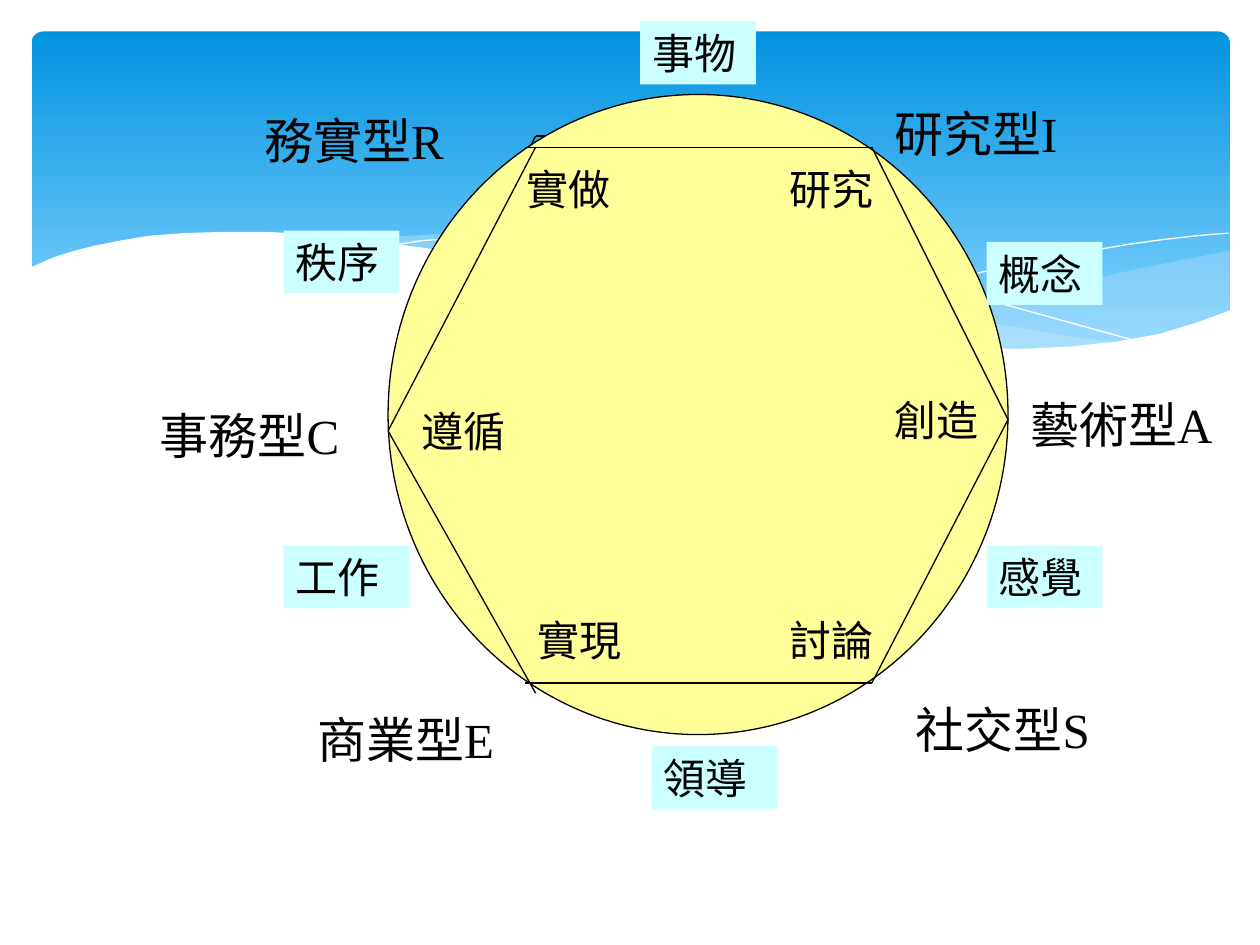
from lxml import etree
from pptx import Presentation
from pptx.dml.color import RGBColor
from pptx.enum.shapes import MSO_CONNECTOR, MSO_SHAPE
from pptx.enum.text import MSO_ANCHOR, MSO_AUTO_SIZE, PP_ALIGN
from pptx.oxml.ns import qn
from pptx.util import Inches, Pt

RECT = MSO_SHAPE.RECTANGLE
ROUND = MSO_SHAPE.ROUNDED_RECTANGLE
OVAL = MSO_SHAPE.OVAL
STRAIGHT = MSO_CONNECTOR.STRAIGHT
LEFT = PP_ALIGN.LEFT
TOP = MSO_ANCHOR.TOP
GROW = MSO_AUTO_SIZE.SHAPE_TO_FIT_TEXT

INK, WHITE, PALE = "000000", "FFFFFF", "C6E7FC"
CREAM, AQUA = "FFFF99", "CCFFFF"

FAR = [(9.75, 1.99), (9.35, 2.07), (8.91, 2.16), (8.32, 2.3), (7.79, 2.42),
       (7.29, 2.53), (6.61, 2.65), (7.05, 2.71), (7.45, 2.75), (7.81, 2.77),
       (8.14, 2.78), (8.54, 2.76), (8.89, 2.72), (9.21, 2.65), (9.49, 2.57),
       (9.76, 2.47), (9.76, 1.99)]
MID = [(8.93, 2.73), (8.37, 2.65), (7.75, 2.54), (7.06, 2.4), (6.29, 2.22),
       (5.84, 2.11), (5.41, 2.03), (5.01, 1.96), (4.65, 1.91), (4.2, 1.87),
       (3.8, 1.86), (3.44, 1.86), (3.13, 1.88), (2.86, 1.91), (3.23, 1.96),
       (3.62, 2.03), (4.04, 2.11), (4.49, 2.22), (5.3, 2.4), (6.01, 2.55),
       (6.65, 2.66), (7.22, 2.74), (7.73, 2.77), (8.18, 2.78), (8.57, 2.77),
       (8.93, 2.73)]
FALL = [(3.09, 1.95), (3.35, 1.91), (3.74, 1.88), (4.16, 1.87), (4.69, 1.89),
        (5.1, 1.92), (5.56, 1.97), (6.08, 2.04), (6.65, 2.13), (7.27, 2.26),
        (7.95, 2.41), (8.31, 2.51), (9.07, 2.72)]
RISE = [(6.13, 2.57), (6.52, 2.46), (6.95, 2.35), (7.48, 2.23), (8.06, 2.1),
        (8.66, 1.99), (8.95, 1.94), (9.24, 1.9), (9.51, 1.87), (9.75, 1.85)]
NEAR = [(9.77, 2.46), (9.5, 2.56), (9.2, 2.65), (8.87, 2.71), (8.5, 2.75),
        (8.09, 2.77), (7.61, 2.75), (7.08, 2.7), (6.47, 2.62), (5.79, 2.5),
        (5.03, 2.33), (4.47, 2.2), (3.91, 2.07), (3.39, 1.97), (2.92, 1.91),
        (2.5, 1.86), (2.11, 1.84), (1.77, 1.84), (1.46, 1.85), (1.19, 1.87),
        (0.95, 1.91), (0.75, 1.95), (0.59, 1.99), (0.46, 2.03), (0.36, 2.07),
        (0.23, 2.13), (0.23, 3.29), (9.77, 3.29)]

BACK = [(4.25, 1.08, 6.67, 1.08), (4.33, 5.5, 6.75, 5.5),
        (4.33, 5.5, 3.08, 3.33), (8, 3.33, 6.67, 1.08),
        (4.25, 1.08, 3.08, 3.42), (8, 3.33, 6.75, 5.5)]
FRONT = [(4.17, 1.17, 6.92, 1.17), (4.17, 5.42, 6.92, 5.42),
         (4.25, 1.17, 3.08, 3.42), (3.08, 3.42, 4.25, 5.5),
         (6.92, 1.17, 8, 3.33), (8, 3.33, 6.92, 5.42)]
TYPES = [("研究型I", 7, 0.77), ("藝術型A", 8.08, 3.08), ("社交型S", 7.17, 5.5),
         ("商業型E", 2.42, 5.58), ("事務型C", 1.17, 3.17), ("務實型R", 2, 0.83)]
ACTS = [("實做", 4.08, 1.25), ("討論", 6.17, 4.83), ("實現", 4.17, 4.83),
        ("遵循", 3.25, 3.17), ("研究", 6.17, 1.25), ("創造", 7, 3.08)]
TAGS = [("事物", 5.08, 0.17, 0.92), ("秩序", 2.25, 1.83, 0.92),
        ("工作", 2.25, 4.33, 1), ("領導", 5.17, 5.92, 1),
        ("感覺", 7.83, 4.33, 0.92), ("概念", 7.83, 1.92, 0.92)]


def color(code):
    return RGBColor.from_string(code)


class Board:
    """Holds the style and the slide being drawn."""

    font = "Times New Roman"
    width = Pt(0.75)

    def __init__(self, slide):
        self.slide = slide
        self.shapes = slide.shapes

    def paint(self, shape, fill=None, line=None, width=None):
        shape.shadow.inherit = False
        if fill:
            shape.fill.solid()
            shape.fill.fore_color.rgb = color(fill)
        else:
            shape.fill.background()
        if line:
            shape.line.color.rgb = color(line)
            shape.line.width = self.width if width is None else width
        else:
            shape.line.fill.background()

    def shape(self, kind, x, y, w, h, fill, line=None):
        item = self.shapes.add_shape(kind, *map(Inches, (x, y, w, h)))
        self.paint(item, fill, line)
        return item

    def sky(self, x, y, w, h, stops):
        item = self.shape(ROUND, x, y, w, h, WHITE)
        item.adjustments[0] = 0.034
        item.fill.gradient()
        item.fill.gradient_angle = 270
        for stop, (place, code) in zip(item.fill.gradient_stops, stops):
            stop.position = place
            stop.color.rgb = color(code)

    def wave(self, dots, fill=None, alpha=None, line=None):
        dots = [(Inches(x), Inches(y)) for x, y in dots]
        pen = self.shapes.build_freeform(*dots[0])
        pen.add_line_segments(dots[1:], close=fill is not None)
        item = pen.convert_to_shape()
        self.paint(item, fill, line, Pt(0))
        if alpha:
            tone = item._element.spPr.find(".//" + qn("a:srgbClr"))
            etree.SubElement(tone, qn("a:alpha"), val=str(alpha * 1000))

    def line(self, *ends):
        item = self.shapes.add_connector(STRAIGHT, *map(Inches, ends))
        item.line.color.rgb = color(INK)
        item.line.width = self.width
        etree.SubElement(item._element.spPr, qn("a:effectLst"))

    def label(self, item, text, size):
        frame = item.text_frame
        frame.word_wrap = True
        frame.auto_size = GROW
        frame.vertical_anchor = TOP
        para = frame.paragraphs[0]
        para.alignment = LEFT
        run = para.add_run()
        run.text = text
        run.font.name = self.font
        run.font.size = Pt(size)
        run.font.color.rgb = color(INK)

    def text(self, text, x, y, w, h, size):
        box = self.shapes.add_textbox(*map(Inches, (x, y, w, h)))
        self.label(box, text, size)

    def tag(self, text, x, y, w):
        self.label(self.shape(RECT, x, y, w, 0.5, AQUA), text, 24)


def main():
    deck = Presentation()
    deck.slide_width, deck.slide_height = Inches(10), Inches(7.5)
    board = Board(deck.slides.add_slide(deck.slide_layouts[6]))
    board.sky(0.25, 0.25, 9.51, 2.7, [(0, "0293E0"), (0.9, "83D3FE")])
    board.wave(FAR, PALE, 29)
    board.wave(MID, PALE, 40)
    board.wave(FALL, line=WHITE)
    board.wave(RISE, line=WHITE)
    board.wave(NEAR, WHITE)
    for ends in BACK:
        board.line(*ends)
    for text, x, y in TYPES:
        board.text(text, x, y, 1.67, 0.57, 28)
    board.shape(OVAL, 3.08, 0.75, 4.92, 5.08, CREAM, INK)
    for ends in FRONT:
        board.line(*ends)
    for text, x, y in ACTS:
        board.text(text, x, y, 1.08, 0.5, 24)
    for tag in TAGS:
        board.tag(*tag)
    deck.save("out.pptx")


if __name__ == "__main__":
    main()
